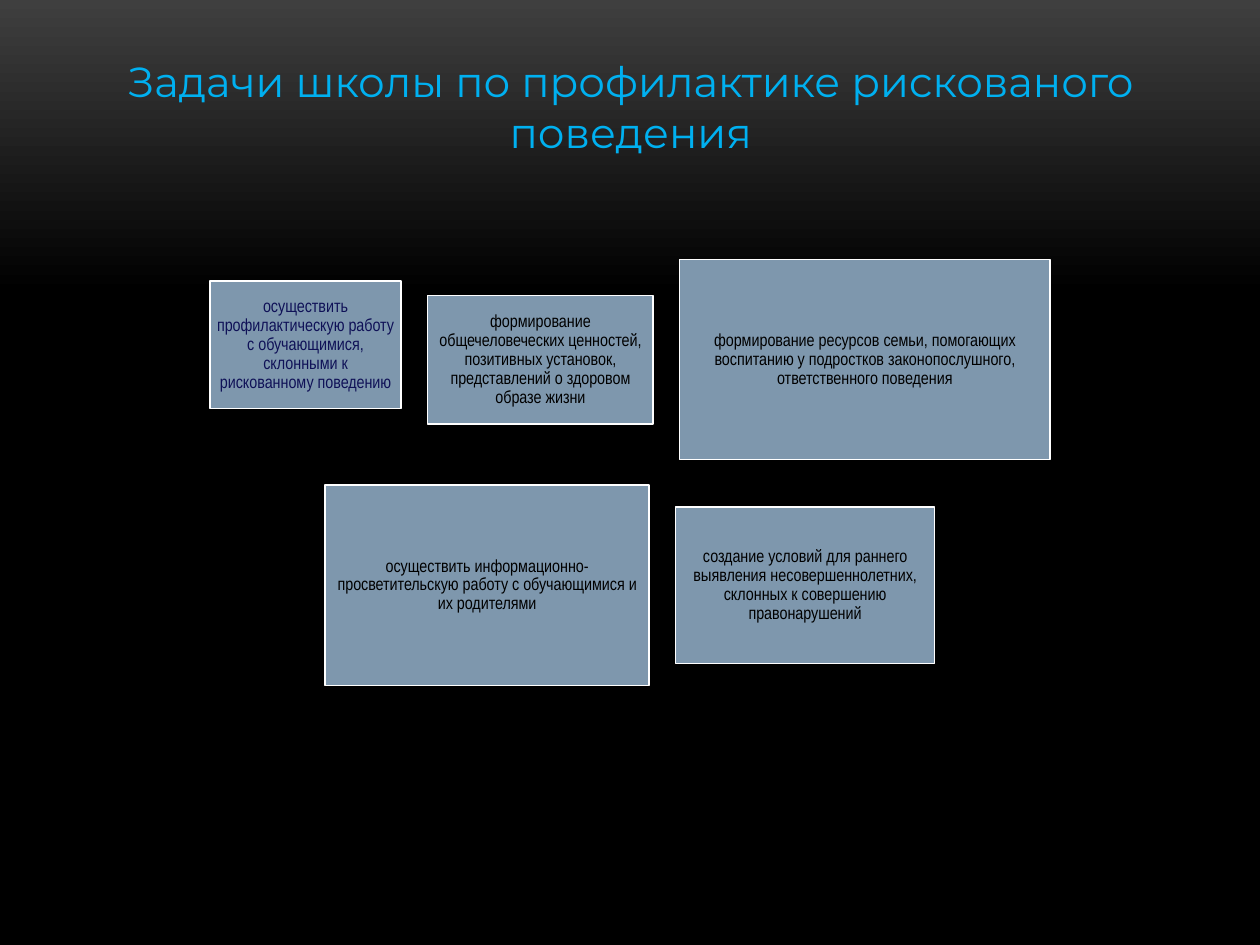
from dataclasses import dataclass

from pptx import Presentation
from pptx import util as u
from pptx.dml.color import RGBColor
from pptx.enum import shapes, text

GRAPHITE = RGBColor(0x3F, 0x3F, 0x3F)
BLACK = RGBColor(0, 0, 0)
WHITE = RGBColor(0xFF, 0xFF, 0xFF)
STEEL = RGBColor(0x7E, 0x97, 0xAD)
NAVY = RGBColor(0x0F, 0x11, 0x57)
SKY = RGBColor(0x00, 0xB0, 0xF0)

PAGE_WIDTH = 25.4
PAGE_HEIGHT = 19.05
GAP = 0.53
INSET = 0.1


@dataclass
class Task:
    wording: str
    width: float
    height: float
    color: RGBColor = BLACK
    shift: float = 0


@dataclass
class Row:
    middle: float
    tasks: list[Task]


ROWS = [
    Row(7.25, [
        Task("осуществить профилактическую работу с обучающимися, "
             "склонными к рискованному поведению", 3.86, 2.57, NAVY, -0.3),
        Task("формирование общечеловеческих ценностей, позитивных установок, "
             "представлений о здоровом образе жизни", 4.55, 2.59),
        Task("формирование ресурсов семьи, помогающих воспитанию у подростков "
             "законопослушного, ответственного поведения", 7.47, 4.04),
    ]),
    Row(11.8, [
        Task("осуществить информационно-просветительскую работу "
             "с обучающимися и их родителями", 6.53, 4.04),
        Task("создание условий для раннего выявления несовершеннолетних, "
             "склонных к совершению правонарушений", 5.23, 3.15),
    ]),
]


def write(frame, wording: str, font: str, size: float, color: RGBColor):
    frame.word_wrap = True
    para = frame.paragraphs[0]
    para.text = wording
    para.alignment = text.PP_ALIGN.CENTER
    span = para.runs[0]
    span.font.name = font
    span.font.size = u.Pt(size)
    span.font.color.rgb = color
    return para


def paint_background(page) -> None:
    fill = page.background.fill
    fill.gradient()
    fill.gradient_angle = 270
    for stop, color, position in zip(fill.gradient_stops, (GRAPHITE, BLACK), (0, 0.31)):
        stop.color.rgb = color
        stop.position = position


def draw_title(page) -> None:
    box = page.shapes.add_textbox(u.Cm(1.4), u.Cm(1), u.Cm(22.63), u.Cm(2.31))
    write(box.text_frame, "Задачи школы по профилактике рискованого поведения",
          "Montserrat", 24, SKY)
    box.text_frame.auto_size = text.MSO_AUTO_SIZE.SHAPE_TO_FIT_TEXT


def draw_task(page, task: Task, left: float, middle: float) -> None:
    top = middle + task.shift - task.height / 2
    box = page.shapes.add_shape(shapes.MSO_SHAPE.RECTANGLE, u.Cm(left), u.Cm(top),
                                u.Cm(task.width), u.Cm(task.height))
    box.shadow.inherit = False
    box.fill.solid()
    box.fill.fore_color.rgb = STEEL
    box.line.color.rgb = WHITE
    box.line.width = u.Pt(0.85)
    frame = box.text_frame
    frame.margin_left = frame.margin_right = u.Cm(INSET)
    frame.margin_top = frame.margin_bottom = u.Cm(INSET)
    frame.vertical_anchor = text.MSO_ANCHOR.MIDDLE
    para = write(frame, task.wording, "Arial Narrow", 10, task.color)
    para.line_spacing = 0.9


def draw_row(page, row: Row) -> None:
    total = sum(task.width for task in row.tasks) + GAP * (len(row.tasks) - 1)
    left = (PAGE_WIDTH - total) / 2
    for task in row.tasks:
        draw_task(page, task, left, row.middle)
        left += task.width + GAP


def main() -> None:
    deck = Presentation()
    deck.slide_width = u.Cm(PAGE_WIDTH)
    deck.slide_height = u.Cm(PAGE_HEIGHT)
    page = deck.slides.add_slide(deck.slide_layouts[6])
    paint_background(page)
    for row in ROWS:
        draw_row(page, row)
    draw_title(page)
    deck.save("out.pptx")


if __name__ == "__main__":
    main()
